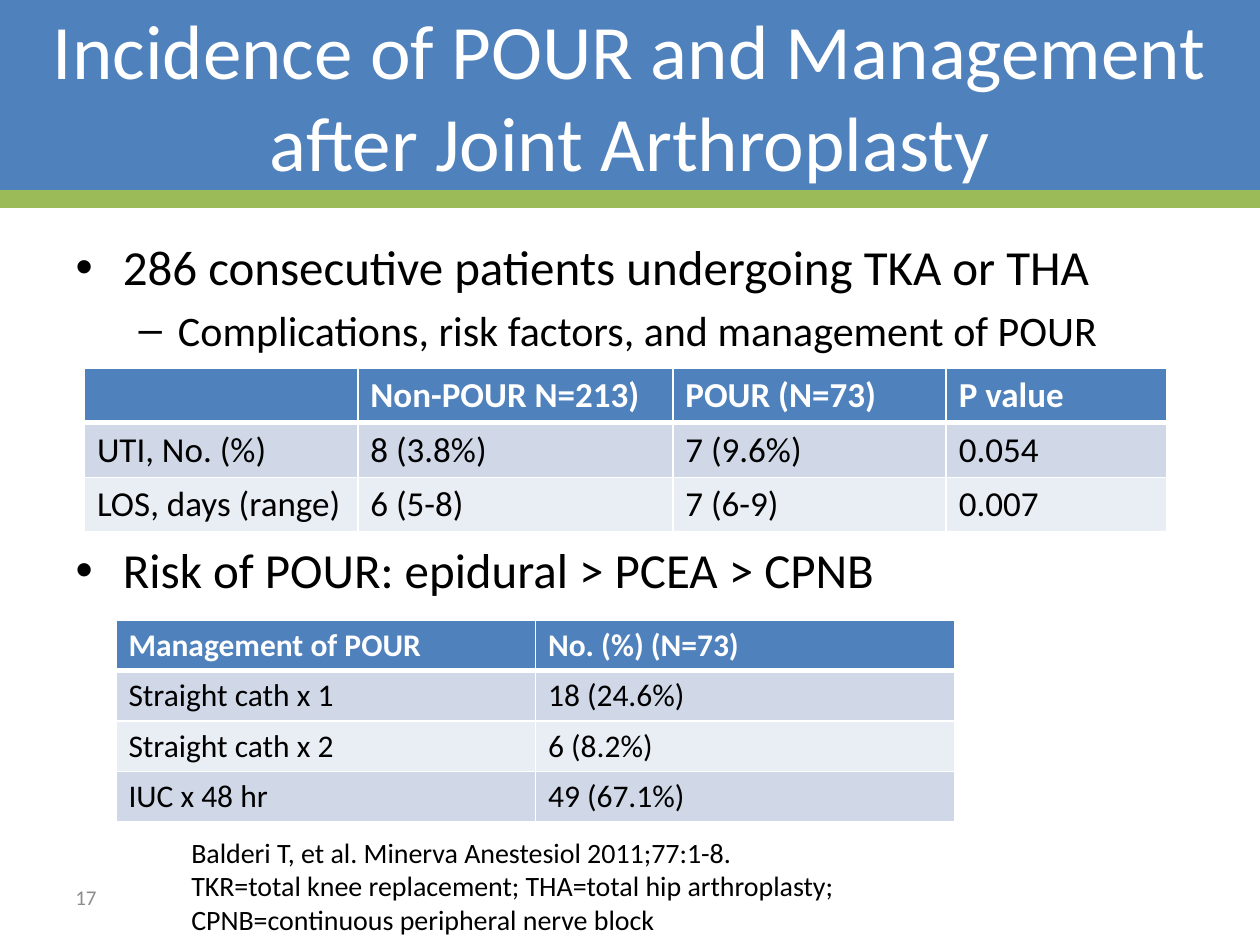
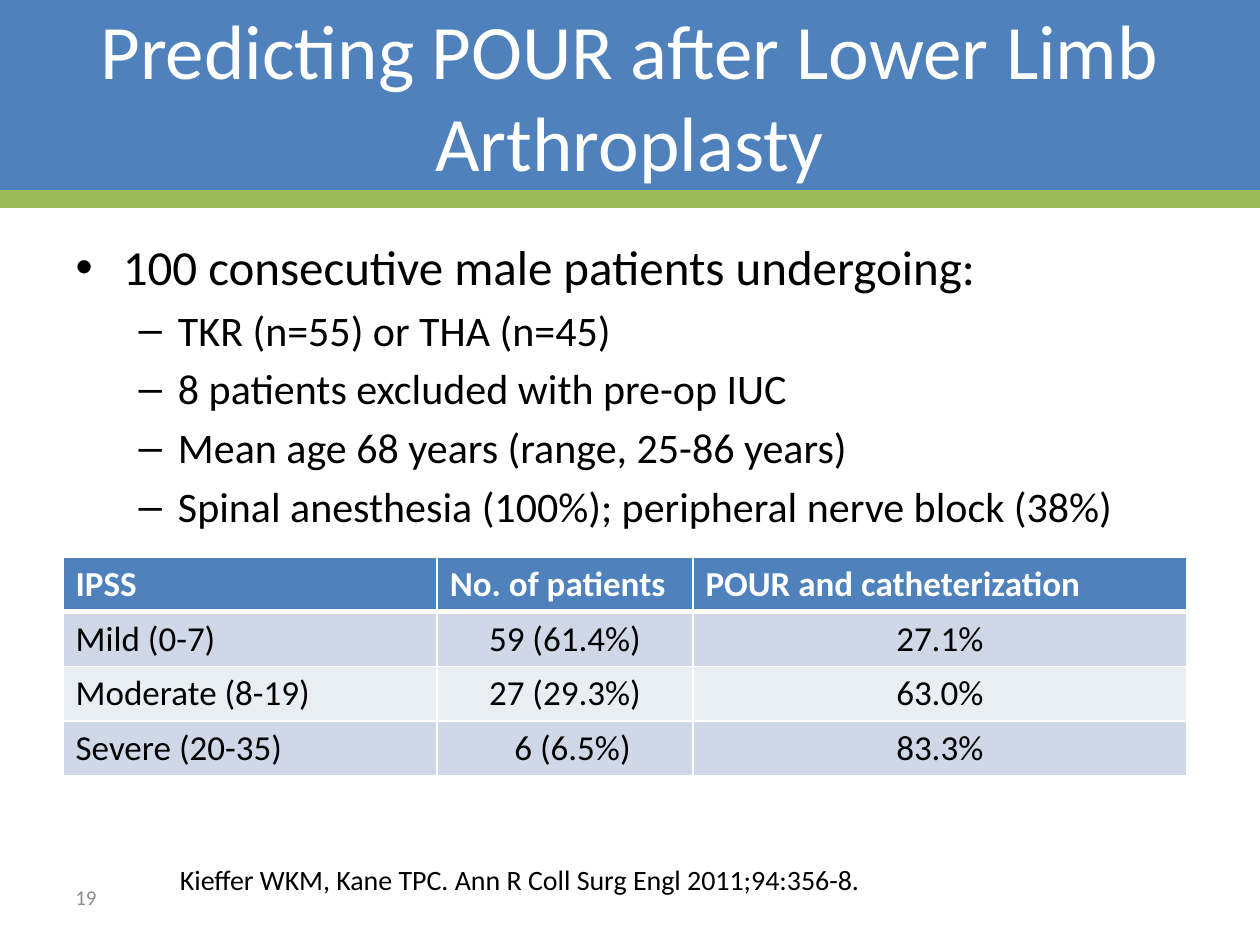
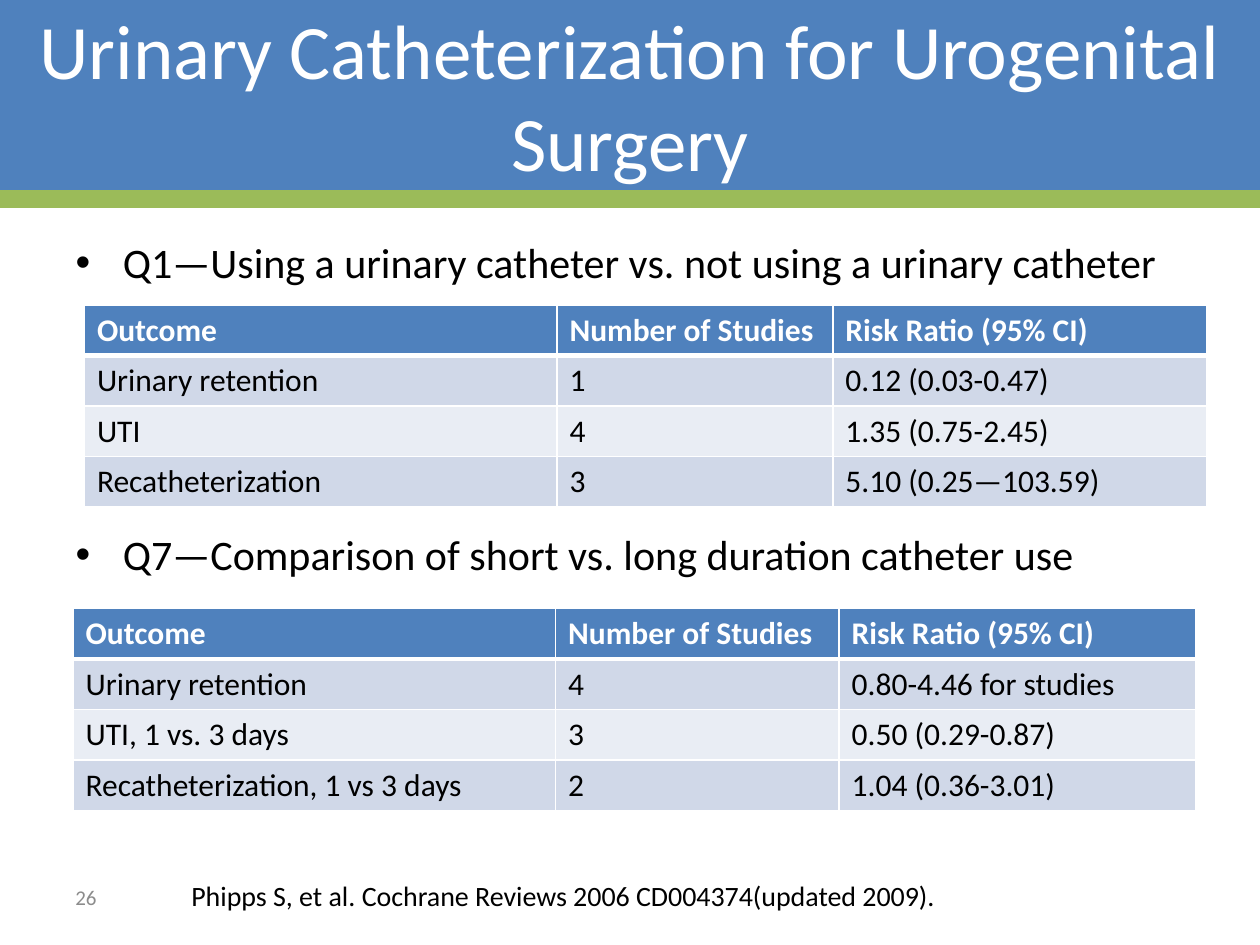
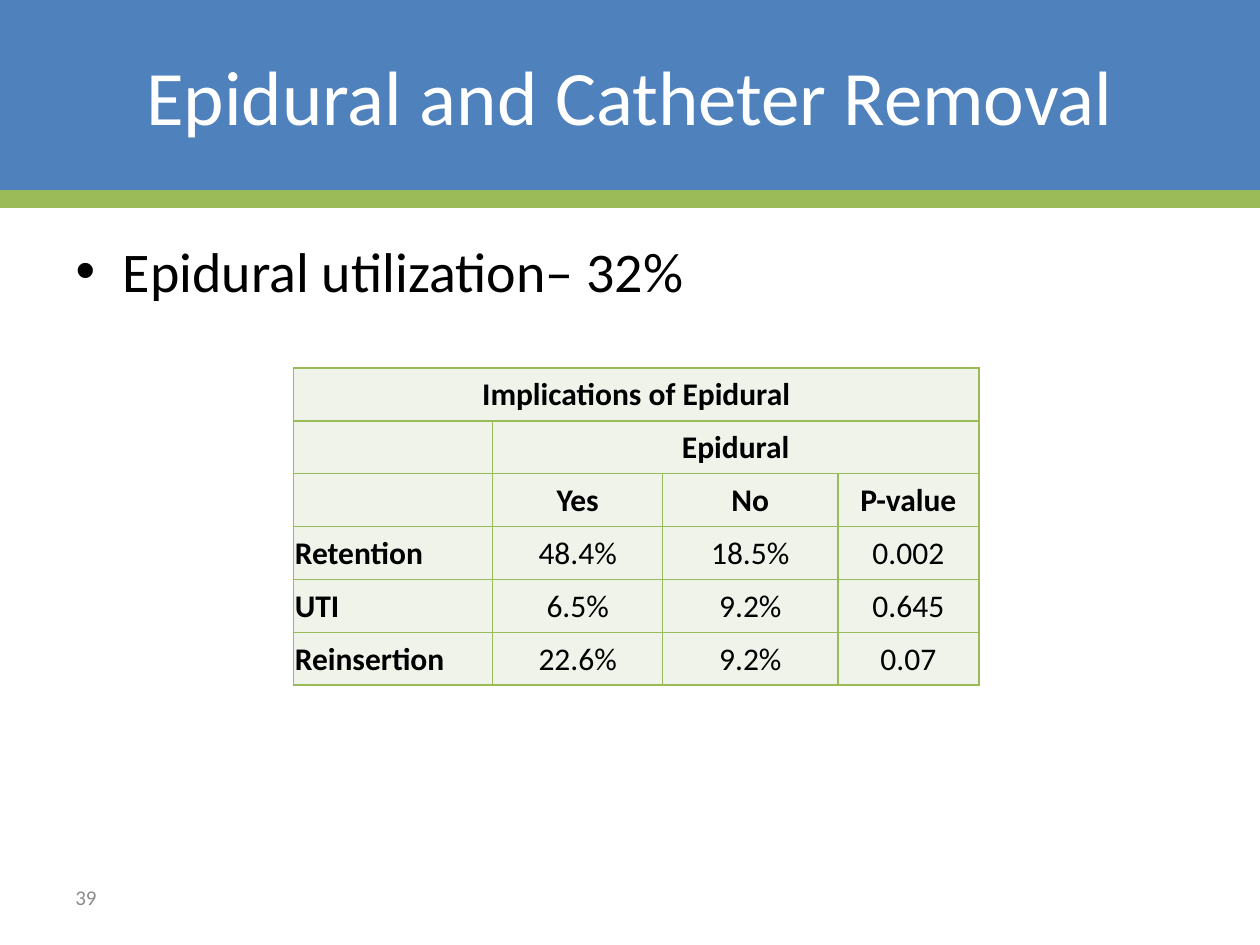
from lxml import etree
from pptx import Presentation
from pptx.dml.color import RGBColor
from pptx.enum.shapes import MSO_CONNECTOR as Link, MSO_SHAPE as Shape
from pptx.enum.text import MSO_ANCHOR as Anchor, MSO_AUTO_SIZE as Fit, PP_ALIGN as Align
from pptx.oxml import parse_xml
from pptx.oxml.ns import nsdecls, qn
from pptx.util import Inches, Pt

WIDE, HIGH = 10, 7.5
FONT = "Calibri"
BLUE, GREEN, WHITE, BLACK, GREY = "4F81BD", "9BBB59", "FFFFFF", "000000", "8C8C8C"
BANDS, MINT = ("D0D8E8", "E9EDF4"), "EFF3EA"
BAND = 1.58  # height of the title band
ALIGN = {"l": Align.LEFT, "c": Align.CENTER}

# Bullets are (level, text, space before or None for the usual gap).
# In a table row, None joins a cell to the one on its left.
SLIDES = [
    {
        "title": "Incidence of POUR and Management after Joint Arthroplasty",
        "page": 17, "size": 28, "deep": 3.33,
        "bullets": [
            (0, "286 consecutive patients undergoing TKA or THA", None),
            (1, "Complications, risk factors, and management of POUR", None),
            (0, "Risk of POUR: epidural > PCEA > CPNB", 106),
        ],
        "tables": [
            {"at": (0.67, 2.92), "cols": (2.17, 2.5, 2.17, 1.75), "row": 0.43,
             "size": 20, "align": "llll", "rows": [
                 ("", "Non-POUR N=213)", "POUR (N=73)", "P value"),
                 ("UTI, No. (%)", "8 (3.8%)", "7 (9.6%)", "0.054"),
                 ("LOS, days (range)", "6 (5-8)", "7 (6-9)", "0.007")]},
            {"at": (0.92, 4.92), "cols": (3.33, 3.33), "row": 0.4,
             "size": 18, "align": "ll", "rows": [
                 ("Management of POUR", "No. (%) (N=73)"),
                 ("Straight cath x 1", "18 (24.6%)"),
                 ("Straight cath x 2", "6 (8.2%)"),
                 ("IUC x 48 hr", "49 (67.1%)")]},
        ],
        "cite": ((1.42, 6.58, 6.37, 0.91),
                 "Balderi T, et al. Minerva Anestesiol 2011;77:1-8.\v"
                 "TKR=total knee replacement; THA=total hip arthroplasty; "
                 "CPNB=continuous peripheral nerve block"),
    },
    {
        "title": "Predicting POUR after Lower Limb Arthroplasty",
        "page": 19, "size": 28, "deep": 4.5,
        "bullets": [
            (0, "100 consecutive male patients undergoing:", None),
            (1, "TKR (n=55) or THA (n=45)", None),
            (1, "8 patients excluded with pre-op IUC", None),
            (1, "Mean age 68 years (range, 25-86 years)", None),
            (1, "Spinal anesthesia (100%); peripheral nerve block (38%)", None),
        ],
        "tables": [
            {"at": (0.5, 4.42), "cols": (2.97, 2.03, 3.92), "row": 0.43,
             "size": 20, "align": "lcc", "nudge": (3, 1), "rows": [
                 ("IPSS", "No. of patients", "POUR and catheterization"),
                 ("Mild (0-7)", "59 (61.4%)", "27.1%"),
                 ("Moderate (8-19)", "27 (29.3%)", "63.0%"),
                 ("Severe (20-35)", "6 (6.5%)", "83.3%")]},
        ],
        "cite": ((1.33, 6.8, 5.67, 0.37),
                 "Kieffer WKM, Kane TPC. Ann R Coll Surg Engl 2011;94:356-8."),
    },
    {
        "title": "Urinary Catheterization for Urogenital Surgery",
        "page": 26, "size": 24, "deep": 4.5,
        "bullets": [
            (0, "Q1—Using a urinary catheter vs. not using a urinary catheter", None),
            (0, "Q7—Comparison of short vs. long duration catheter use", 138),
        ],
        "tables": [
            {"at": (0.67, 2.42), "cols": (3.75, 2.19, 2.97), "row": 0.4,
             "size": 18, "align": "lll", "rows": [
                 ("Outcome", "Number of Studies", "Risk Ratio (95% CI)"),
                 ("Urinary retention", "1", "0.12 (0.03-0.47)"),
                 ("UTI", "4", "1.35 (0.75-2.45)"),
                 ("Recatheterization", "3", "5.10 (0.25—103.59)")]},
            {"at": (0.58, 4.83), "cols": (3.83, 2.25, 2.83), "row": 0.4,
             "size": 18, "align": "lll", "rows": [
                 ("Outcome", "Number of Studies", "Risk Ratio (95% CI)"),
                 ("Urinary retention", "4", "0.80-4.46 for studies"),
                 ("UTI, 1 vs. 3 days", "3", "0.50 (0.29-0.87)"),
                 ("Recatheterization, 1 vs 3 days", "2", "1.04 (0.36-3.01)")]},
        ],
        "cite": ((1.42, 6.92, 6.58, 0.37),
                 "Phipps S, et al. Cochrane Reviews 2006 CD004374(updated 2009)."),
    },
    {
        "title": "Epidural and Catheter Removal",
        "page": 39, "size": 32, "deep": 4.5,
        "bullets": [(0, "Epidural utilization– 32%", None)],
        "tables": [
            {"at": (2.33, 2.92), "cols": (1.58, 1.35, 1.39, 1.12), "row": 0.42,
             "size": 18, "align": "lccc", "heads": 3, "boxed": True, "rows": [
                 ("Implications of Epidural", None, None, None),
                 ("", "Epidural", None, None),
                 ("", "Yes", "No", "P-value"),
                 ("Retention", "48.4%", "18.5%", "0.002"),
                 ("UTI", "6.5%", "9.2%", "0.645"),
                 ("Reinsertion", "22.6%", "9.2%", "0.07")]},
        ],
    },
]


def rgb(code):
    return RGBColor.from_string(code)


def style(font, size, tint=BLACK, bold=False):
    for key, val in {"name": FONT, "size": Pt(size), "bold": bold}.items():
        setattr(font, key, val)
    font.color.rgb = rgb(tint)


def place(shape, *box):
    for key, val in zip(("left", "top", "width", "height"), box):
        setattr(shape, key, Inches(val))


def label(slide, box, text, size, tint=BLACK, anchor=Anchor.TOP):
    frame = slide.shapes.add_textbox(*map(Inches, box)).text_frame
    frame.word_wrap, frame.vertical_anchor = True, anchor
    frame.text = text
    style(frame.paragraphs[0].font, size, tint)
    for run in frame.paragraphs[0].runs:
        style(run.font, size, tint)


def edge(cell, tint, widths):
    """Draw the left, right, top and bottom borders of a cell."""
    props = cell._tc.get_or_add_tcPr()
    for side, width in zip("LRTB", widths):
        props.append(parse_xml(
            f'<a:ln{side} {nsdecls("a")} w="{Pt(width)}"><a:solidFill>'
            f'<a:srgbClr val="{tint}"/></a:solidFill></a:ln{side}>'))


def add_grid(slide, spec):
    rows, cols = spec["rows"], spec["cols"]
    heads, boxed = spec.get("heads", 1), spec.get("boxed", False)
    size = (sum(cols), spec["row"] * len(rows))
    grid = slide.shapes.add_table(
        len(rows), len(cols), *map(Inches, spec["at"] + size)).table
    for col, width in zip(grid.columns, cols):
        col.width = Inches(width)
    for r, row in enumerate(rows):
        head = r < heads
        for c, text in enumerate(row):
            cell = grid.cell(r, c)
            if boxed:
                edge(cell, GREEN, (1, 1, 1, 1))
                fill, tint, bold = MINT, BLACK, head or c == 0
                cell.vertical_anchor = Anchor.MIDDLE
                cell.margin_left = cell.margin_right = cell.margin_top = Inches(0.01)
                cell.margin_bottom = 0
            else:
                edge(cell, WHITE, (1, 1, 3 if r == 1 else 1, 3 if head else 1))
                fill = BLUE if head else BANDS[(r - 1) % 2]
                tint, bold = WHITE if head else BLACK, head
            cell.fill.solid()
            cell.fill.fore_color.rgb = rgb(fill)
            if spec.get("nudge") == (r, c):
                cell.margin_left = Inches(0.22)
            if not text:
                continue
            para = cell.text_frame.paragraphs[0]
            run = para.add_run()
            run.text = text
            style(run.font, spec["size"], tint, bold)
            if boxed and head:
                para.alignment = Align.CENTER
            else:
                para.alignment = ALIGN["l" if head else spec["align"][c]]
        for c, text in enumerate(row):
            span = 1
            while c + span < len(row) and row[c + span] is None:
                span += 1
            if text is not None and span > 1:
                grid.cell(r, c).merge(grid.cell(r, c + span - 1))


def add_bullets(body, spec):
    place(body, 0.5, 1.83, 8.92, spec["deep"])
    frame = body.text_frame
    frame.auto_size = Fit.NONE
    for i, (level, text, gap) in enumerate(spec["bullets"]):
        para = frame.add_paragraph() if i else frame.paragraphs[0]
        para.level = level
        if i == 0:
            para.space_before = Pt(0)
        elif gap:
            para.space_before = Pt(gap)
        run = para.add_run()
        run.text = text
        style(run.font, 24 if level else spec["size"])


def add_band(slide, layout):
    """Draw the title band and its rule, then hand them to the layout."""
    band = slide.shapes.add_shape(Shape.RECTANGLE, 0, 0, Inches(WIDE), Inches(BAND))
    band.shadow.inherit = False
    band.fill.solid()
    band.fill.fore_color.rgb = rgb(BLUE)
    band.line.fill.background()
    rule = slide.shapes.add_connector(
        Link.STRAIGHT, 0, Inches(BAND), Inches(WIDE), Inches(BAND))
    rule.line.color.rgb = rgb(GREEN)
    rule.line.width = Pt(10)
    etree.SubElement(rule.element.spPr, qn("a:effectLst"))
    for spot, part in enumerate((band, rule), 2):
        layout.shapes.element.insert(spot, part.element)


def main():
    deck = Presentation()
    deck.slide_width, deck.slide_height = Inches(WIDE), Inches(HIGH)
    layout = deck.slide_layouts.get_by_name("Title and Content")
    for i, spec in enumerate(SLIDES):
        slide = deck.slides.add_slide(layout)
        if i == 0:
            add_band(slide, layout)
        title, body = slide.placeholders
        place(title, 0, 0, WIDE, 1.5)
        title.text_frame.text = spec["title"]
        title.text_frame.auto_size = Fit.NONE
        style(title.text_frame.paragraphs[0].runs[0].font, 44, WHITE)
        label(slide, (0.5, 6.92, 2.33, 0.4), str(spec["page"]), 12, GREY, Anchor.MIDDLE)
        add_bullets(body, spec)
        for grid in spec["tables"]:
            add_grid(slide, grid)
        if "cite" in spec:
            box, text = spec["cite"]
            label(slide, box, text, 16)
    deck.save("out.pptx")


if __name__ == "__main__":
    main()
